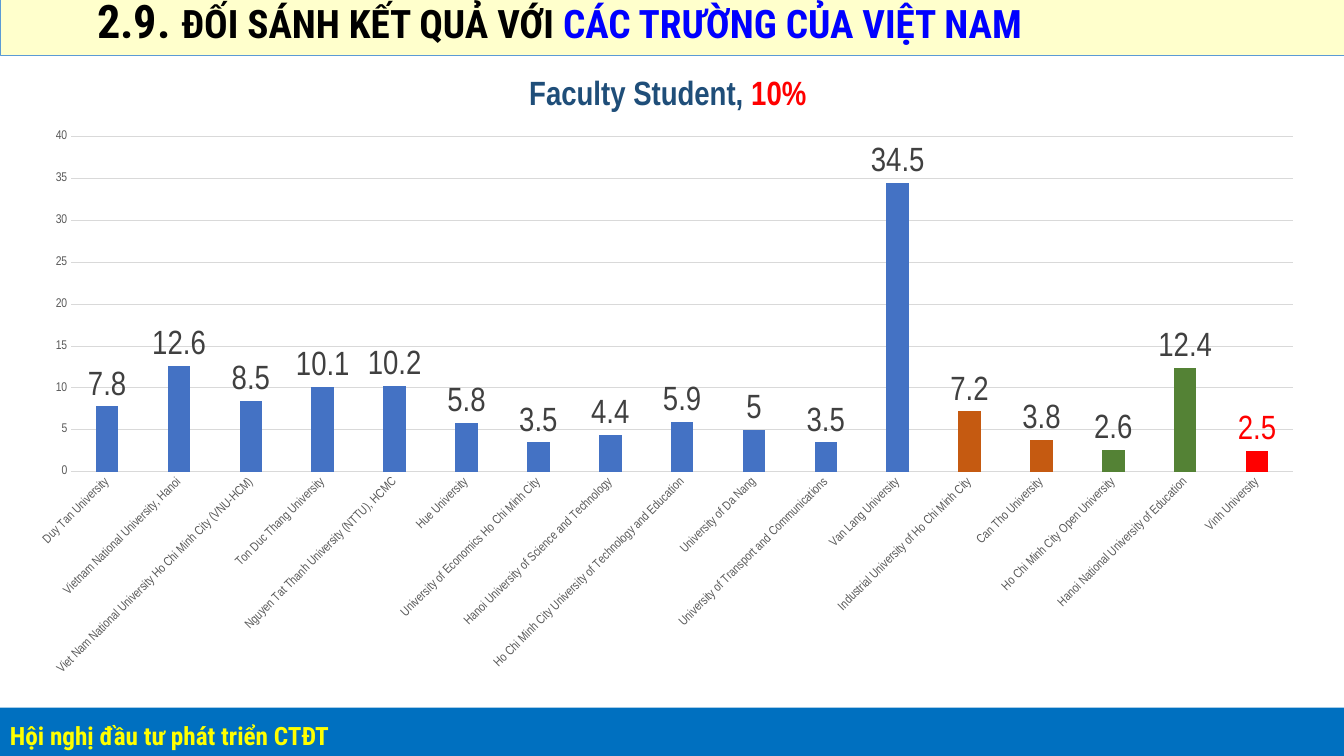
from dataclasses import dataclass

from lxml.etree import SubElement
from pptx import Presentation
from pptx.chart.data import CategoryChartData
from pptx.dml.color import RGBColor
from pptx.enum.chart import XL_CHART_TYPE, XL_LABEL_POSITION, XL_TICK_MARK
from pptx.enum.shapes import MSO_SHAPE
from pptx.enum.text import MSO_ANCHOR, PP_ALIGN
from pptx.oxml.ns import qn
from pptx.util import Pt


@dataclass(frozen=True)
class Theme:
    """Colours, fonts and type sizes of the slide."""
    cream: str = "FFFFCC"
    outline: str = "5B9BD5"
    footer: str = "0070C0"
    black: str = "000000"
    blue: str = "0000FF"
    yellow: str = "FFFF00"
    navy: str = "1F4E79"
    red: str = "FF0000"
    bar: str = "4472C4"
    orange: str = "C55A11"
    green: str = "548235"
    grid: str = "D9D9D9"
    axis: str = "595959"
    label: str = "404040"
    head_font: str = "Roboto Condensed"
    chart_font: str = "Arial Narrow"
    number_size: float = 33
    head_size: float = 28
    footer_size: float = 18
    chart_size: float = 24
    base_size: float = 10
    axis_size: float = 9


UNIVERSITIES = [
    ("Duy Tan University", 7.8),
    ("Vietnam National University, Hanoi", 12.6),
    ("Viet Nam National University Ho Chi Minh City (VNU-HCM)", 8.5),
    ("Ton Duc Thang University", 10.1),
    ("Nguyen Tat Thanh University (NTTU), HCMC", 10.2),
    ("Hue University", 5.8),
    ("University of Economics Ho Chi Minh City", 3.5),
    ("Hanoi University of Science and Technology", 4.4),
    ("Ho Chi Minh City University of Technology and Education", 5.9),
    ("University of Da Nang", 5),
    ("University of Transport and Communications", 3.5),
    ("Van Lang University", 34.5),
    ("Industrial University of Ho Chi Minh City", 7.2),
    ("Can Tho University", 3.8),
    ("Ho Chi Minh City Open University", 2.6),
    ("Hanoi National University of Education", 12.4),
    ("Vinh University", 2.5),
]


def set_font(font, color, size, name, bold=False):
    """Apply colour, size, typeface and weight to a font."""
    font.color.rgb = RGBColor.from_string(color)
    font.size, font.name, font.bold = Pt(size), name, bold


def add_text(p, text, **fmt):
    """Add a formatted run to a paragraph."""
    r = p.add_run()
    r.text = text
    set_font(r.font, **fmt)


def paint(fill, color):
    """Give a fill one solid colour."""
    fill.solid()
    fill.fore_color.rgb = RGBColor.from_string(color)


def rule(line, color, width):
    """Give a line its colour and width."""
    line.color.rgb = RGBColor.from_string(color)
    line.width = Pt(width)


class SlideBuilder:
    """Draws elements on the current slide in one theme."""

    def __init__(self, s, theme):
        """Keep the slide and its theme."""
        self.s, self.t = s, theme

    def band(self, x, y, w, h, color, runs, line=None, inset=(7.2, 3.6), indent=0):
        """Add a filled strip with a line of text and return its paragraph."""
        sp = self.s.shapes.add_shape(MSO_SHAPE.RECTANGLE, Pt(x), Pt(y), Pt(w), Pt(h))
        sp.shadow.inherit = False
        paint(sp.fill, color)
        if line:
            rule(sp.line, line, 0.5)
        else:
            sp.line.fill.background()
        tf = sp.text_frame
        tf.word_wrap = True
        tf.vertical_anchor = MSO_ANCHOR.MIDDLE
        tf.margin_left = tf.margin_right = Pt(inset[0])
        tf.margin_top = tf.margin_bottom = Pt(inset[1])
        p = tf.paragraphs[0]
        p.alignment = PP_ALIGN.LEFT
        p._p.get_or_add_pPr().set("marL", str(Pt(indent)))
        for text, size, ink in runs:
            add_text(p, text, color=ink, size=size, name=self.t.head_font, bold=True)
        return p

    def column_chart(self, x, y, w, h, rows, title, highlights):
        """Add a column chart with highlighted bars and value labels."""
        t = self.t
        data = CategoryChartData()
        data.categories = [name for name, _ in rows]
        data.add_series("Series 1", [value for _, value in rows])
        chart = self.s.shapes.add_chart(
            XL_CHART_TYPE.COLUMN_CLUSTERED, Pt(x), Pt(y), Pt(w), Pt(h), data).chart
        set_font(chart.font, t.black, t.base_size, t.chart_font)
        chart.has_legend = False
        p = chart.chart_title.text_frame.paragraphs[0]
        for text, ink in title:
            add_text(p, text, color=ink, size=t.chart_size, name=t.chart_font, bold=True)
        self.axes(chart)
        self.place_plot(chart, x=0.043, y=0.124, w=0.936, h=0.531)

        plot = chart.plots[0]
        plot.gap_width, plot.overlap, plot.vary_by_categories = 219, -27, False
        ser = plot.series[0]
        ser.invert_if_negative = False
        paint(ser.format.fill, t.bar)
        for i, color in highlights.items():
            paint(ser.points[i].format.fill, color)
        labels = ser.data_labels
        labels.show_value = True
        last = ser.points[len(rows) - 1].data_label
        for label, color in ((labels, t.label), (last, t.red)):
            label.position = XL_LABEL_POSITION.OUTSIDE_END
            set_font(label.font, color, t.chart_size, t.chart_font)

    def axes(self, chart):
        """Format both axes, the gridlines and the slanted names."""
        t = self.t
        cat, val = chart.category_axis, chart.value_axis
        for axis in (cat, val):
            axis.major_tick_mark = axis.minor_tick_mark = XL_TICK_MARK.NONE
            set_font(axis.tick_labels.font, t.axis, t.axis_size, t.chart_font)
        cat._element.txPr.bodyPr.set("rot", "-2700000")
        rule(cat.format.line, t.grid, 0.75)
        val.format.line.fill.background()
        val.minimum_scale, val.maximum_scale, val.major_unit = 0, 40, 5
        rule(val.major_gridlines.format.line, t.grid, 0.75)

    def place_plot(self, chart, **box):
        """Fix the inner plot area as fractions of the chart."""
        area = chart._chartSpace.chart.plotArea
        layout = area.find(qn("c:layout"))
        if layout is None:
            layout = SubElement(area, qn("c:layout"))
            area.insert(0, layout)
        manual = SubElement(layout, qn("c:manualLayout"))
        settings = {"layoutTarget": "inner", "xMode": "edge", "yMode": "edge", **box}
        for tag, value in settings.items():
            SubElement(manual, qn(f"c:{tag}")).set("val", str(value))


def main():
    """Build the slide and save it."""
    t = Theme()
    prs = Presentation()
    prs.slide_width, prs.slide_height = Pt(960), Pt(540)
    b = SlideBuilder(prs.slides.add_slide(prs.slide_layouts[6]), t)
    b.band(0, -10.8, 960, 50.4, t.cream,
           [("2.9. ", t.number_size, t.black),
            ("ĐỐI SÁNH KẾT QUẢ VỚI ", t.head_size, t.black),
            ("CÁC TRƯỜNG CỦA VIỆT NAM", t.head_size, t.blue)],
           line=t.outline, inset=(9.4, 5), indent=60)
    p = b.band(0, 505.5, 960, 36.7, t.footer,
               [("Hội nghị đầu tư phát triển CTĐT", t.footer_size, t.yellow)])
    p.line_spacing, p.space_before, p.space_after = 1.1, Pt(12), Pt(6)
    b.column_chart(10.8, 41.8, 932.4, 450.7, UNIVERSITIES,
                   [("Faculty Student, ", t.navy), ("10%", t.red)],
                   {12: t.orange, 13: t.orange, 14: t.green, 15: t.green, 16: t.red})
    prs.save("out.pptx")


if __name__ == "__main__":
    main()
